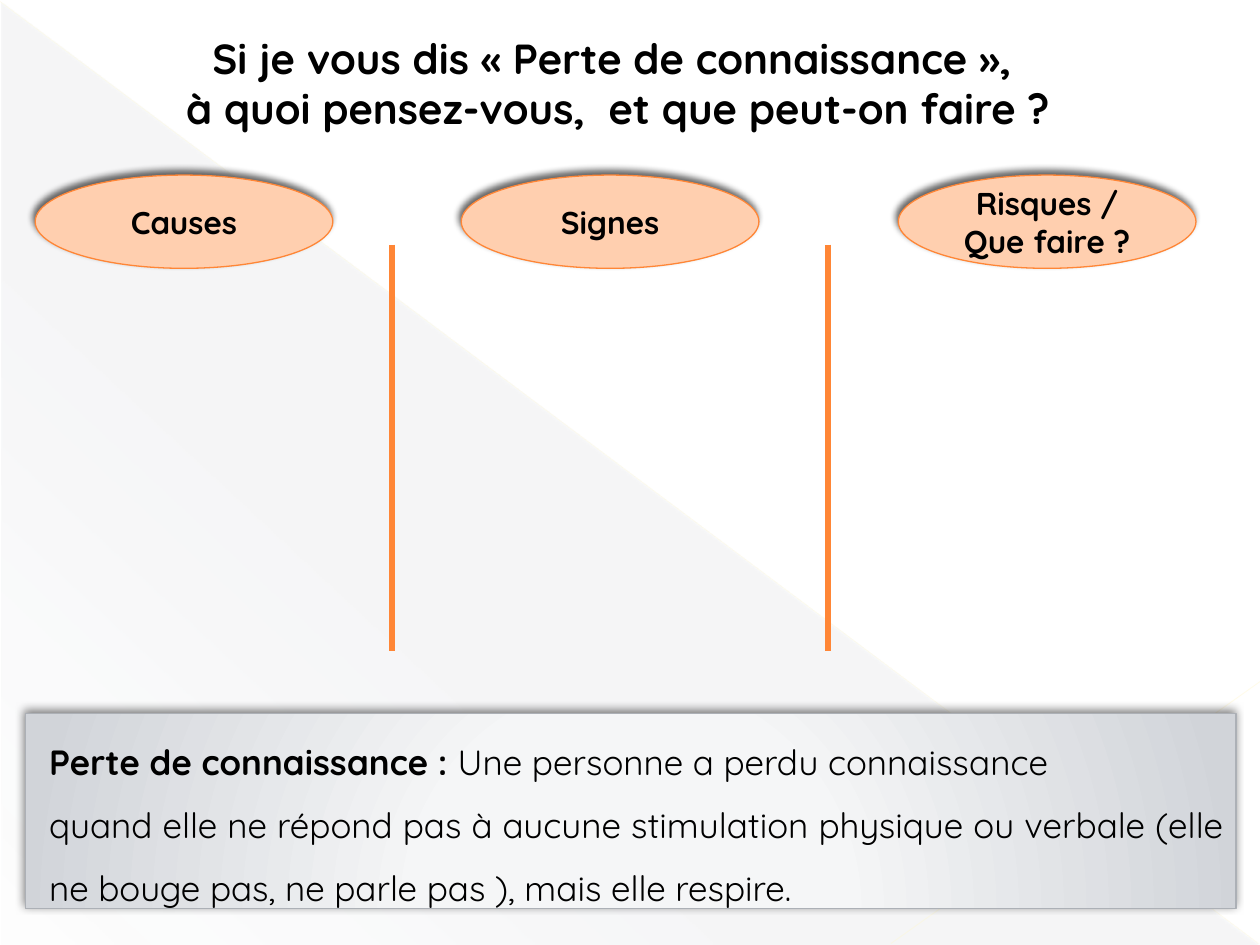
from pptx import Presentation
from pptx.dml.color import RGBColor
from pptx.enum.shapes import MSO_CONNECTOR, MSO_SHAPE
from pptx.enum.text import MSO_ANCHOR, PP_ALIGN
from pptx.oxml import parse_xml
from pptx.oxml.ns import nsdecls, qn
from pptx.oxml.xmlchemy import OxmlElement
from pptx.util import Cm, Pt

COLOURS = {
    "text": "000000",
    "orange": "FF8636",
    "peach": "FFCFAF",
    "grey": "969DAB",
    "cream": "FFF8D1",
    "panel_line": "ACB0B6",
    "panel_centre": "F8F8F9",
    "panel_middle": "F5F6F7",
    "panel_edge": "D1D4D9",
    "shadow": "000000",
}
FONT = "Quicksand"
LINEAR = '<a:lin ang="7980000" scaled="0"/>'
RADIAL = ('<a:path path="circle"><a:fillToRect l="50000" t="155000" '
          'r="50000" b="-55000"/></a:path>')


def rgb(name):
    return RGBColor.from_string(COLOURS[name])


def colour_xml(name, alpha):
    return (f'<a:srgbClr val="{COLOURS[name]}">'
            f'<a:alpha val="{alpha * 1000}"/></a:srgbClr>')


class SlideBuilder:
    def __init__(self, slide):
        self.slide = slide

    def shape(self, kind, left, top, width, height, fill=None, line=None):
        shape = self.slide.shapes.add_shape(
            kind, Cm(left), Cm(top), Cm(width), Cm(height))
        shape.shadow.inherit = False
        if fill:
            shape.fill.solid()
            shape.fill.fore_color.rgb = rgb(fill)
        if line:
            shape.line.color.rgb = rgb(line)
            shape.line.width = Pt(0.75)
        else:
            shape.line.fill.background()
        return shape

    def gradient(self, shape, stops, direction):
        """Fill with (position, colour, opacity) stops, all but colour in percent."""
        shape.fill.background()
        stops_xml = "".join(
            f'<a:gs pos="{position * 1000}">{colour_xml(name, alpha)}</a:gs>'
            for position, name, alpha in stops)
        properties = shape.element.spPr
        properties.replace(properties.find(qn("a:noFill")), parse_xml(
            f'<a:gradFill {nsdecls("a")} rotWithShape="1">'
            f'<a:gsLst>{stops_xml}</a:gsLst>{direction}</a:gradFill>'))

    def shadow(self, shape, alpha, blur, distance):
        shape.element.spPr.find(qn("a:effectLst")).append(parse_xml(
            f'<a:outerShdw {nsdecls("a")} blurRad="{Pt(blur)}" '
            f'dist="{Pt(distance)}" dir="14700000" algn="tl" rotWithShape="0">'
            f'{colour_xml("shadow", alpha)}</a:outerShdw>'))

    def line(self, x1, y1, x2, y2, colour, width, alpha=100):
        connector = self.slide.shapes.add_connector(
            MSO_CONNECTOR.STRAIGHT, Cm(x1), Cm(y1), Cm(x2), Cm(y2))
        connector.line.color.rgb = rgb(colour)
        connector.line.width = Pt(width)
        properties = connector.element.spPr
        if alpha < 100:
            solid = properties.find(qn("a:ln")).find(qn("a:solidFill"))
            solid.replace(solid[0], parse_xml(colour_xml(colour, alpha).replace(
                "<a:srgbClr", f'<a:srgbClr {nsdecls("a")}', 1)))
        properties.append(OxmlElement("a:effectLst"))

    def text(self, shape, paragraphs, size, align, anchor, bold=None):
        """Write paragraphs, each a list of runs, and return them."""
        frame = shape.text_frame
        frame.word_wrap = True
        frame.vertical_anchor = anchor
        for index, runs in enumerate(paragraphs):
            paragraph = frame.paragraphs[0] if index == 0 else frame.add_paragraph()
            paragraph.alignment = align
            font = paragraph.font
            font.name, font.size, font.bold = FONT, Pt(size), bold
            font.color.rgb = rgb("text")
            for content in runs:
                paragraph.add_run().text = content
        return frame.paragraphs

    def backdrop(self):
        triangle = self.shape(MSO_SHAPE.RIGHT_TRIANGLE, 0.03, 0.05, 25.35, 19)
        self.gradient(triangle, [(0, "grey", 10), (70, "grey", 8),
                                 (100, "grey", 1)], LINEAR)
        self.line(0, 0.03, 25.37, 19.02, "cream", 0.39, 35)
        self.line(25.4, 13.74, 17.96, 19.02, "cream", 0.47, 45)

    def title(self, lines):
        box = self.slide.shapes.add_textbox(
            Cm(-0.05), Cm(0.53), Cm(25.25), Cm(2.31))
        self.text(box, [[line] for line in lines], 24,
                  PP_ALIGN.CENTER, MSO_ANCHOR.TOP, True)

    def heading(self, left, label):
        oval = self.shape(MSO_SHAPE.OVAL, left, 3.53, 6, 1.88, "peach", "orange")
        self.shadow(oval, 60, 4, 3)
        self.text(oval, [[label]], 18, PP_ALIGN.CENTER, MSO_ANCHOR.MIDDLE, True)

    def definition(self, term, opening, rest):
        panel = self.shape(MSO_SHAPE.RECTANGLE, 0.51, 14.38, 24.41, 3.94,
                           line="panel_line")
        self.gradient(panel, [(0, "panel_centre", 100), (34, "panel_middle", 100),
                              (100, "panel_edge", 100)], RADIAL)
        self.shadow(panel, 50, 5, 2)
        paragraphs = self.text(panel, [[term, opening], [rest]], 20,
                               PP_ALIGN.JUSTIFY, MSO_ANCHOR.TOP)
        for paragraph in paragraphs:
            paragraph.line_spacing = 1.5
            paragraph._p.get_or_add_pPr().set("marL", str(Cm(0.23)))
        paragraphs[0].runs[0].font.bold = True


def main():
    presentation = Presentation()
    presentation.slide_width, presentation.slide_height = Cm(25.4), Cm(19.05)
    builder = SlideBuilder(
        presentation.slides.add_slide(presentation.slide_layouts[6]))

    builder.backdrop()
    builder.title(["Si je vous dis « Perte de connaissance »,  ",
                   "à quoi pensez-vous,  et que peut-on faire ? "])
    for separator in (7.9, 16.69):
        builder.line(separator, 4.93, separator, 13.13, "orange", 3)
    builder.definition(
        "Perte de connaissance : ",
        "Une personne a perdu connaissance ",
        "quand elle ne répond pas à aucune stimulation physique ou verbale "
        "(elle ne bouge pas, ne parle pas ), mais elle respire. ")
    for left, label in ((0.71, "Causes"), (9.3, "Signes"),
                        (18.11, "Risques / Que faire ?")):
        builder.heading(left, label)

    presentation.save("out.pptx")


if __name__ == "__main__":
    main()
